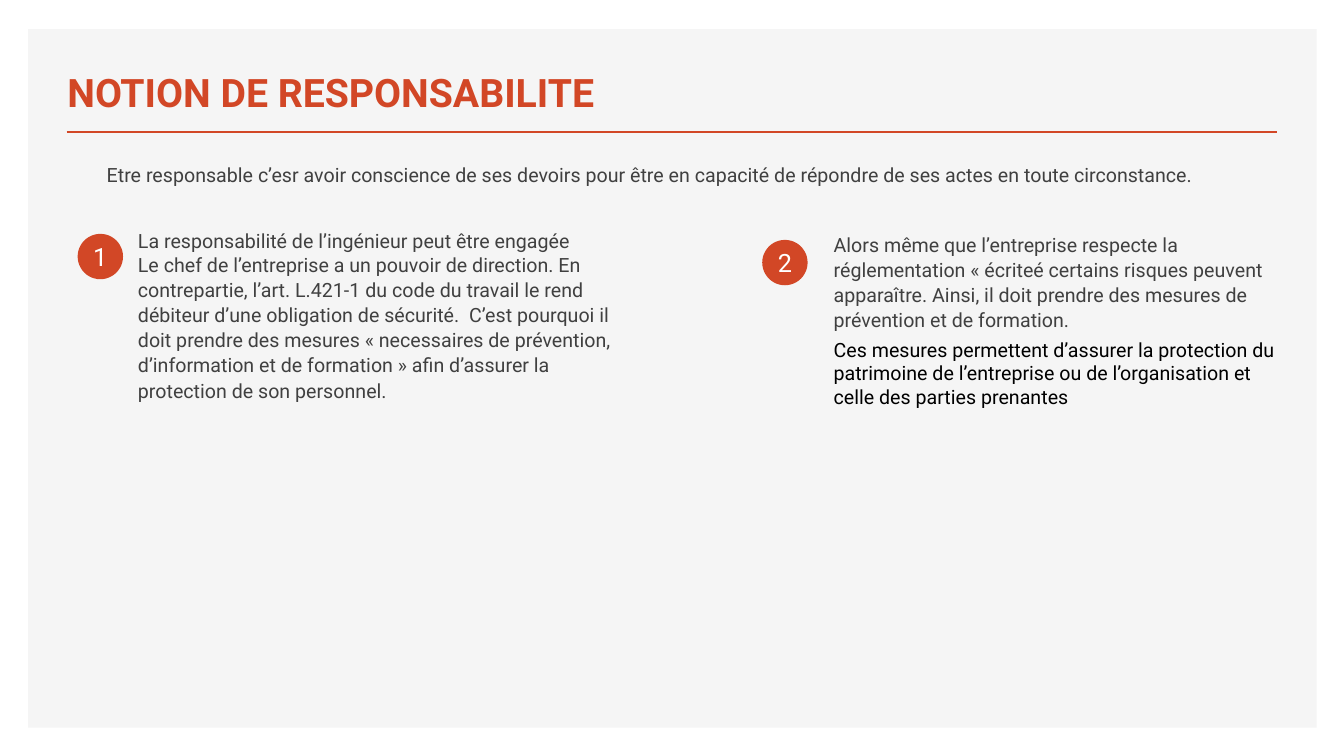
from dataclasses import dataclass

from pptx import Presentation
from pptx.dml.color import RGBColor
from pptx.enum.shapes import MSO_CONNECTOR, MSO_SHAPE
from pptx.enum.text import MSO_ANCHOR, PP_ALIGN
from pptx.oxml.ns import qn
from pptx.shapes.autoshape import Shape
from pptx.slide import Slide
from pptx.util import Inches, Pt

COLORS = {
    "accent": "D24726",
    "panel": "F5F5F5",
    "body": "404040",
    "black": "000000",
    "white": "FFFFFF",
}
FONT = "Roboto"
BADGE_SIZE = 0.45
NUMBER_WIDTH, NUMBER_HEIGHT = 0.61, 0.4


@dataclass
class TextBlock:
    left: float
    top: float
    width: float
    height: float
    text: str
    size: float = 14
    color: str = "body"
    bold: bool = False
    align: PP_ALIGN = PP_ALIGN.LEFT
    anchor: MSO_ANCHOR = MSO_ANCHOR.TOP
    line: float | None = None
    before: float = 0
    after: float = 0


@dataclass
class Badge:
    left: float
    top: float
    number: str


def body(left: float, top: float, width: float, height: float, text: str,
         after: float = 20) -> TextBlock:
    """Describe a grey paragraph with exact 18 pt line spacing."""
    return TextBlock(left, top, width, height, text, line=18, before=10, after=after)


TITLE = TextBlock(0.57, 0.49, 7.52, 0.7, "NOTION DE RESPONSABILITE", size=28,
                  color="accent", bold=True, anchor=MSO_ANCHOR.BOTTOM)

BLOCKS = [
    body(0.96, 1.55, 11.61, 0.52,
         "Etre responsable c’esr avoir conscience de ses devoirs pour être en "
         "capacité de répondre de ses actes en toute circonstance."),
    body(1.27, 2.21, 5.02, 0.65,
         "La responsabilité de l’ingénieur peut être engagée", after=6),
    body(1.27, 2.44, 4.93, 1.58,
         "Le chef de l’entreprise a un pouvoir de direction. En contrepartie, "
         "l’art. L.421-1 du code du travail le rend débiteur d’une obligation de "
         "sécurité.  C’est pourquoi il doit prendre des mesures « necessaires de "
         "prévention, d’information et de formation » afin d’assurer la "
         "protection de son personnel."),
    body(8.17, 2.24, 4.93, 0.62,
         "Alors même que l’entreprise respecte la réglementation « écriteé "
         "certains risques peuvent apparaître. Ainsi, il doit prendre des mesures "
         "de prévention et de formation."),
    TextBlock(8.17, 3.3, 4.7, 0.81,
              "Ces mesures permettent d’assurer la protection du patrimoine de "
              "l’entreprise ou de l’organisation et celle des parties prenantes",
              color="black"),
]

BADGES = [Badge(0.77, 2.32, "1"), Badge(7.56, 2.38, "2")]


def rgb(name: str) -> RGBColor:
    return RGBColor.from_string(COLORS[name])


def add_filled(s: Slide, kind: MSO_SHAPE, left: float, top: float,
               width: float, height: float, color: str) -> Shape:
    sp = s.shapes.add_shape(kind, Inches(left), Inches(top),
                            Inches(width), Inches(height))
    sp.shadow.inherit = False
    sp.fill.solid()
    sp.fill.fore_color.rgb = rgb(color)
    sp.line.fill.background()
    return sp


def add_text(s: Slide, block: TextBlock) -> None:
    sp = s.shapes.add_textbox(Inches(block.left), Inches(block.top),
                              Inches(block.width), Inches(block.height))
    tf = sp.text_frame
    tf.word_wrap = True
    tf.vertical_anchor = block.anchor
    p = tf.paragraphs[0]
    p.alignment = block.align
    p.space_before = Pt(block.before)
    p.space_after = Pt(block.after)
    if block.line:
        p.line_spacing = Pt(block.line)
    r = p.add_run()
    r.text = block.text
    r.font.name = FONT
    r.font.size = Pt(block.size)
    r.font.bold = block.bold
    r.font.color.rgb = rgb(block.color)


def add_title_rule(s: Slide) -> None:
    rule = s.shapes.add_connector(MSO_CONNECTOR.STRAIGHT, Inches(0.66), Inches(1.31),
                                  Inches(12.67), Inches(1.31))
    rule.line.color.rgb = rgb("accent")
    rule.line.width = Pt(2)
    sp_pr = rule._element.spPr
    sp_pr.append(sp_pr.makeelement(qn("a:effectLst"), {}))


def add_badge(s: Slide, badge: Badge) -> None:
    """Draw a disc with its number centred in a wider text box."""
    add_filled(s, MSO_SHAPE.OVAL, badge.left, badge.top,
               BADGE_SIZE, BADGE_SIZE, "accent")
    add_text(s, TextBlock(badge.left + (BADGE_SIZE - NUMBER_WIDTH) / 2,
                          badge.top + (BADGE_SIZE - NUMBER_HEIGHT) / 2,
                          NUMBER_WIDTH, NUMBER_HEIGHT, badge.number, size=18,
                          color="white", align=PP_ALIGN.CENTER))


def main() -> None:
    prs = Presentation()
    prs.slide_width, prs.slide_height = Inches(13.33), Inches(7.5)
    s = prs.slides.add_slide(prs.slide_layouts[6])
    add_filled(s, MSO_SHAPE.RECTANGLE, 0.28, 0.29, 12.78, 6.93, "panel")
    add_title_rule(s)
    add_text(s, TITLE)
    for badge in BADGES:
        add_badge(s, badge)
    for block in BLOCKS:
        add_text(s, block)
    prs.save("out.pptx")


if __name__ == "__main__":
    main()
